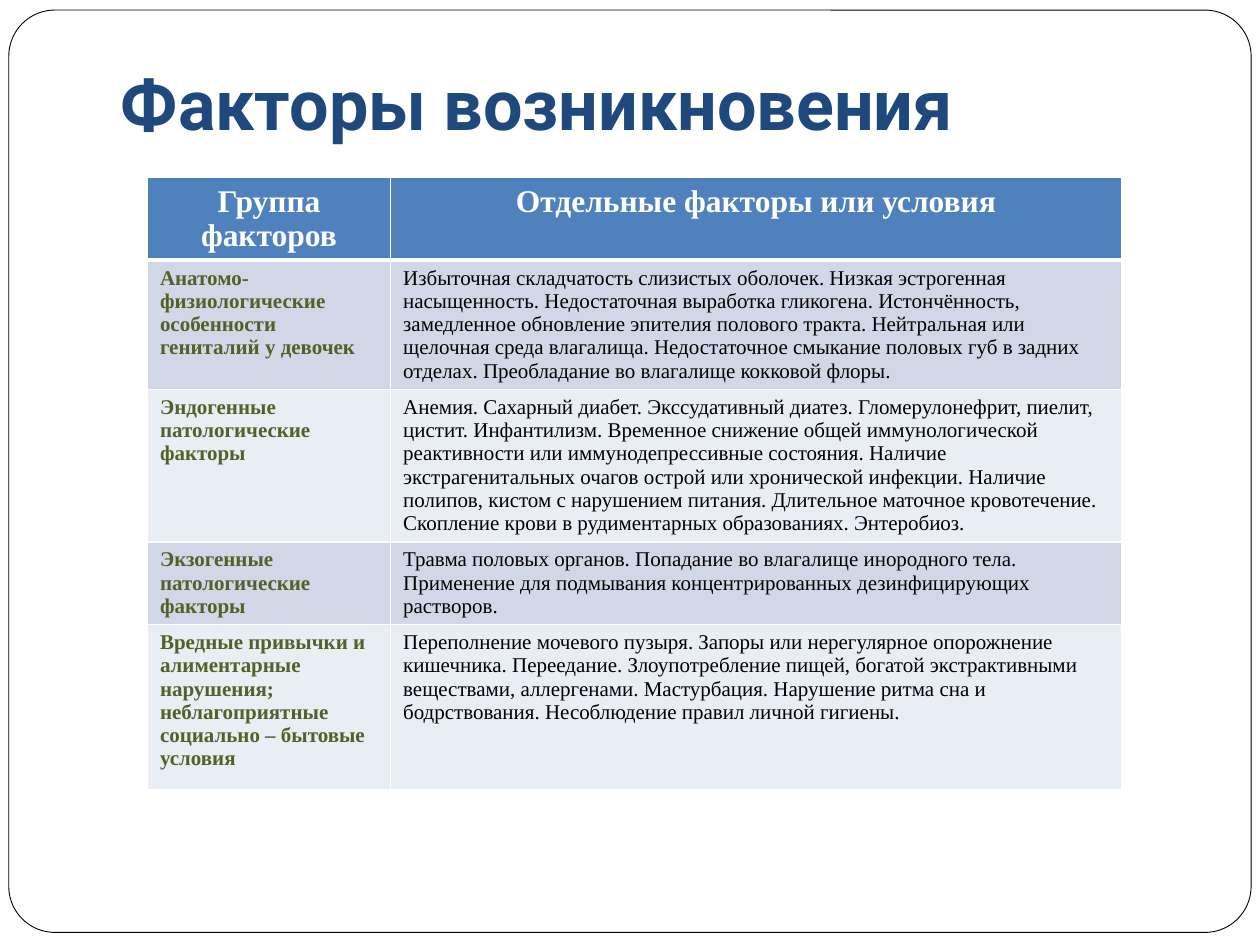
from dataclasses import dataclass

from lxml.etree import SubElement
from pptx import Presentation
from pptx.dml.color import RGBColor as Rgb
from pptx.enum.shapes import MSO_SHAPE as Shape
from pptx.enum.text import MSO_ANCHOR as Anchor, MSO_AUTO_SIZE as Fit, PP_ALIGN as Align
from pptx.oxml.ns import qn
from pptx.util import Inches, Pt


@dataclass(frozen=True)
class Theme:
    white: str = "FFFFFF"
    black: str = "000000"
    navy: str = "1F497D"
    blue: str = "4F81BD"
    green: str = "4F6228"
    bands: tuple = ("D0D8E8", "E9EDF4")
    sans: str = "Roboto"
    serif: str = "Times New Roman"
    title: int = 40
    head: int = 18
    body: int = 12


THEME = Theme()
COLS = (1.93, 5.8)
ROWS = (0.42, 0.85, 1.05, 0.45, 1.31)
HEADS = ("Группа факторов", "Отдельные факторы или условия")
FACTORS = (
    ("Анатомо-физиологические особенности гениталий у девочек",
     "Избыточная складчатость слизистых оболочек. Низкая эстрогенная насыщенность. "
     "Недостаточная выработка гликогена. Истончённость, замедленное обновление эпителия "
     "полового тракта. Нейтральная или щелочная среда влагалища. Недостаточное смыкание "
     "половых губ в задних отделах. Преобладание во влагалище кокковой флоры."),
    ("Эндогенные патологические факторы",
     "Анемия. Сахарный диабет. Экссудативный диатез. Гломерулонефрит, пиелит, цистит. "
     "Инфантилизм. Временное снижение общей иммунологической реактивности или "
     "иммунодепрессивные состояния. Наличие экстрагенитальных очагов острой или "
     "хронической инфекции. Наличие полипов, кистом с нарушением питания. Длительное "
     "маточное кровотечение. Скопление крови в рудиментарных образованиях. Энтеробиоз."),
    ("Экзогенные патологические факторы",
     "Травма половых органов. Попадание во влагалище инородного тела. Применение для "
     "подмывания концентрированных дезинфицирующих растворов."),
    ("Вредные привычки и алиментарные нарушения; неблагоприятные социально – бытовые условия",
     "Переполнение мочевого пузыря. Запоры или нерегулярное опорожнение кишечника. "
     "Переедание. Злоупотребление пищей, богатой экстрактивными веществами, аллергенами. "
     "Мастурбация. Нарушение ритма сна и бодрствования. Несоблюдение правил личной гигиены."),
)


def write(frame, text, face, size, color, bold, align=Align.LEFT):
    frame.text = text
    para = frame.paragraphs[0]
    para.alignment = align
    font = para.runs[0].font
    font.name, font.size, font.bold = face, Pt(size), bold
    font.color.rgb = Rgb.from_string(color)


def add_frame(slide):
    """Draw the rounded page outline behind everything else."""
    shape = slide.shapes.add_shape(Shape.ROUNDED_RECTANGLE, Inches(0.07), Inches(0.08),
                                   Inches(9.86), Inches(7.32))
    shape.adjustments[0] = 0.05
    shape.shadow.inherit = False
    shape.fill.solid()
    shape.fill.fore_color.rgb = Rgb.from_string(THEME.white)
    shape.line.color.rgb = Rgb.from_string(THEME.black)
    shape.line.width = Pt(0.5)
    slide.shapes._spTree.insert(2, shape._element)


def set_title(slide, text):
    title = slide.shapes.title
    title.left, title.top = Inches(0.86), Inches(0)
    title.width, title.height = Inches(8.5), Inches(1.25)
    frame = title.text_frame
    frame.auto_size = Fit.NONE
    frame.vertical_anchor = Anchor.BOTTOM
    frame.margin_bottom = Inches(0.1)
    write(frame, text, THEME.sans, THEME.title, THEME.navy, True)


def set_edges(cell, **widths):
    props = cell._tc.get_or_add_tcPr()
    for side in "LRTB":
        line = SubElement(props, qn(f"a:ln{side}"), w=str(Pt(widths.get(side, 1))))
        fill = SubElement(line, qn("a:solidFill"))
        SubElement(fill, qn("a:srgbClr"), val=THEME.white)


def paint(cell, color):
    cell.fill.solid()
    cell.fill.fore_color.rgb = Rgb.from_string(color)


def add_grid(slide):
    table = slide.shapes.add_table(len(ROWS), len(COLS), Inches(1.17), Inches(1.41),
                                   Inches(sum(COLS)), Inches(sum(ROWS))).table
    for col, width in zip(table.columns, COLS):
        col.width = Inches(width)
    for row, height in zip(table.rows, ROWS):
        row.height = Inches(height)
    for cell, text in zip(table.rows[0].cells, HEADS):
        set_edges(cell, B=3)
        paint(cell, THEME.blue)
        write(cell.text_frame, text, THEME.serif, THEME.head, THEME.white, True, Align.CENTER)
    for i, texts in enumerate(FACTORS):
        for j, text in enumerate(texts):
            cell = table.cell(i + 1, j)
            set_edges(cell, T=1 if i else 3)
            paint(cell, THEME.bands[i % 2])
            color = THEME.black if j else THEME.green
            write(cell.text_frame, text, THEME.serif, THEME.body, color, j == 0)


def main():
    deck = Presentation()
    deck.slide_width, deck.slide_height = Inches(10), Inches(7.5)
    slide = deck.slides.add_slide(deck.slide_layouts[5])
    add_frame(slide)
    set_title(slide, "Факторы возникновения")
    add_grid(slide)
    deck.save("out.pptx")


if __name__ == "__main__":
    main()
